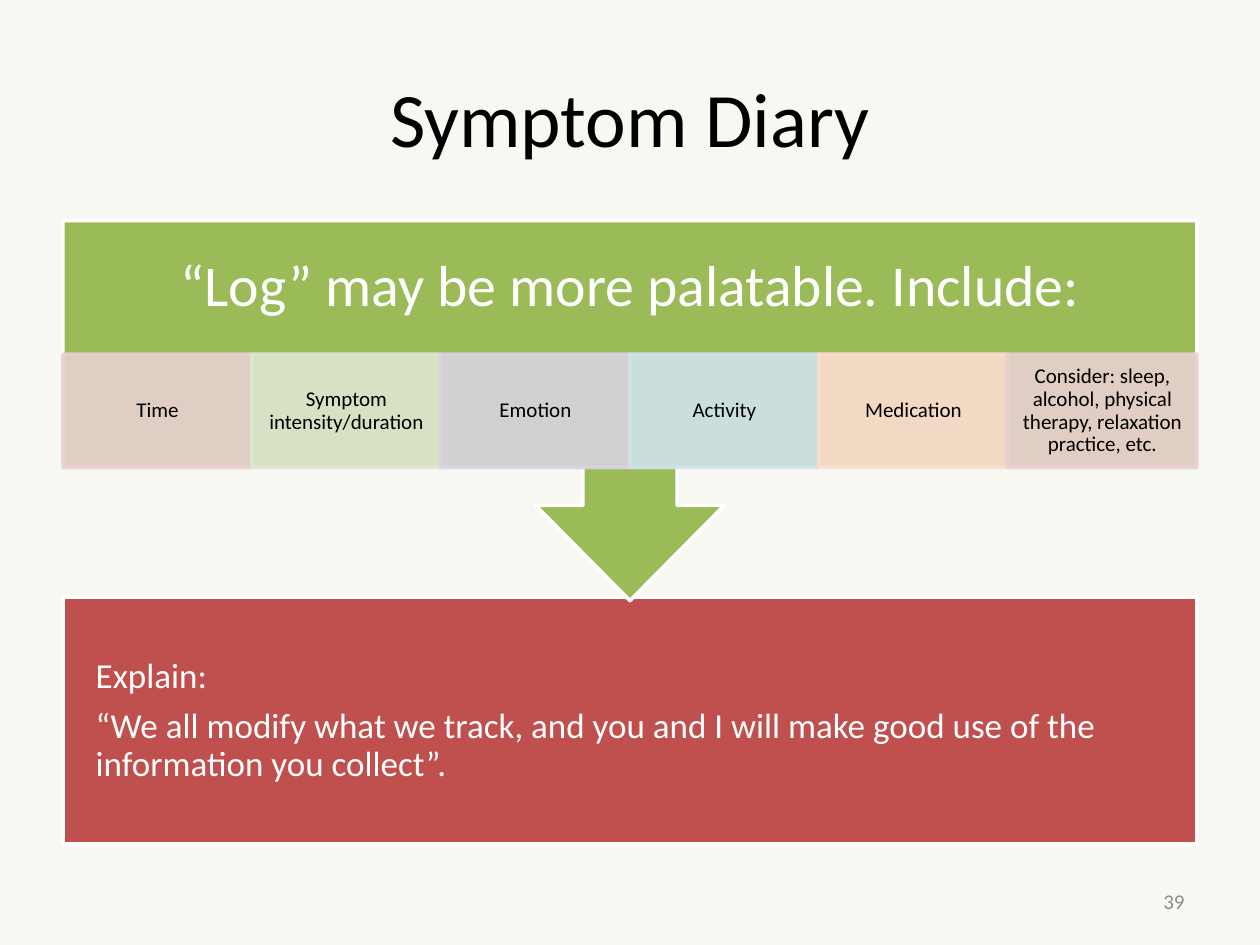
from dataclasses import dataclass
from lxml.etree import SubElement
from pptx import Presentation
from pptx.dml.color import RGBColor
from pptx.enum.shapes import MSO_SHAPE
from pptx.enum.text import MSO_ANCHOR, PP_ALIGN
from pptx.oxml.ns import qn
from pptx.util import Cm, Pt


@dataclass(frozen=True)
class Theme:
    font: str = "Calibri"
    back: str = "F8F8F3"
    ink: str = "000000"
    pale: str = "FFFFFF"
    grey: str = "8C8C8C"
    green: str = "9BBB59"
    red: str = "C0504D"
    tints: tuple = ("E8D0D0", "DEE7D1", "D8D3E0", "D0E3EA", "FCDDCF", "E8D0D0")
    title: int = 44
    head: int = 33
    body: int = 20
    small: int = 12


THEME = Theme()
ITEMS = ("Time", "Symptom intensity/duration", "Emotion", "Activity", "Medication",
         "Consider: sleep, alcohol, physical therapy, relaxation practice, etc.")


def rgb(code):
    return RGBColor.from_string(code)


def write(shape, lines, size, color, align, pads=None, tight=True):
    """Set the text; pads are left, top, right and bottom in cm."""
    frame = shape.text_frame
    frame.text = "\n".join(lines)
    look = {"word_wrap": True, "vertical_anchor": MSO_ANCHOR.MIDDLE}
    if pads:
        sides = ("margin_left", "margin_top", "margin_right", "margin_bottom")
        look.update(zip(sides, map(Cm, pads)))
    for name, value in look.items():
        setattr(frame, name, value)
    form = {"alignment": align}
    if tight:
        form.update(line_spacing=0.9, space_after=Pt(size * 0.35))
    for para in frame.paragraphs:
        for name, value in form.items():
            setattr(para, name, value)
        for name, value in {"name": THEME.font, "size": Pt(size)}.items():
            setattr(para.font, name, value)
        para.font.color.rgb = rgb(color)


def paint(shape, fill, line, alpha=None):
    shape.shadow.inherit = False
    shape.fill.solid()
    shape.fill.fore_color.rgb = rgb(fill)
    shape.line.color.rgb = rgb(line)
    shape.line.width = Pt(2)
    if alpha:
        for node in shape.element.spPr.iter(qn("a:srgbClr")):
            SubElement(node, qn("a:alpha")).set("val", str(alpha * 1000))


def block(slide, x, y, w, h):
    return slide.shapes.add_shape(MSO_SHAPE.RECTANGLE, Cm(x), Cm(y), Cm(w), Cm(h))


def heading(slide, x, y, w, h):
    title = slide.shapes.title
    for name, value in zip(("left", "top", "width", "height"), (x, y, w, h)):
        setattr(title, name, Cm(value))
    write(title, ["Symptom Diary"], THEME.title, THEME.ink, PP_ALIGN.CENTER, tight=False)


def explain(slide, x, y, w, h):
    box = block(slide, x, y, w, h)
    paint(box, THEME.red, THEME.pale)
    write(box, ["Explain:", "“We all modify what we track, and you and I will make good "
                "use of the information you collect”."],
          THEME.body, THEME.pale, PP_ALIGN.LEFT, [0.66] * 4)


def callout(slide, x, y, w, h):
    """Box whose lower edge runs out into a down arrow."""
    mid, edge, neck = x + w / 2, y + 4.98, y + 5.74
    stem, head = 0.95, 1.9
    points = [(x + w, y), (x + w, edge), (mid + stem, edge), (mid + stem, neck),
              (mid + head, neck), (mid, y + h), (mid - head, neck),
              (mid - stem, neck), (mid - stem, edge), (x, edge)]
    form = slide.shapes.build_freeform(Cm(x), Cm(y))
    form.add_line_segments([(Cm(a), Cm(b)) for a, b in points], close=True)
    shape = form.convert_to_shape()
    paint(shape, THEME.green, THEME.pale)
    write(shape, ["“Log” may be more palatable. Include:"], THEME.head, THEME.pale,
          PP_ALIGN.CENTER, (0.66, 0.66, 0.66, 5.61))


def tiles(slide, x, y, w, h):
    step = w / len(ITEMS)
    for i, (item, tint) in enumerate(zip(ITEMS, THEME.tints)):
        tile = block(slide, x + i * step, y, step, h)
        paint(tile, tint, tint, alpha=90)
        write(tile, [item], THEME.small, THEME.ink, PP_ALIGN.CENTER,
              (0.23, 0.05, 0.23, 0.05))


def number(slide, x, y, w, h):
    box = slide.shapes.add_textbox(Cm(x), Cm(y), Cm(w), Cm(h))
    write(box, ["39"], THEME.small, THEME.grey, PP_ALIGN.RIGHT, tight=False)


def main():
    deck = Presentation()
    deck.slide_width, deck.slide_height = Cm(25.4), Cm(19.05)
    slide = deck.slides.add_slide(deck.slide_layouts[5])
    slide.background.fill.solid()
    slide.background.fill.fore_color.rgb = rgb(THEME.back)

    left, wide = 1.27, 22.86
    heading(slide, left, 0.76, wide, 3.18)
    # The arrow's tip overlaps the lower box
    explain(slide, left, 12.04, wide, 4.98)
    callout(slide, left, 4.45, wide, 7.66)
    tiles(slide, left, 7.14, wide, 2.29)
    number(slide, 18.21, 17.65, 5.92, 1.02)
    deck.save("out.pptx")


if __name__ == "__main__":
    main()
